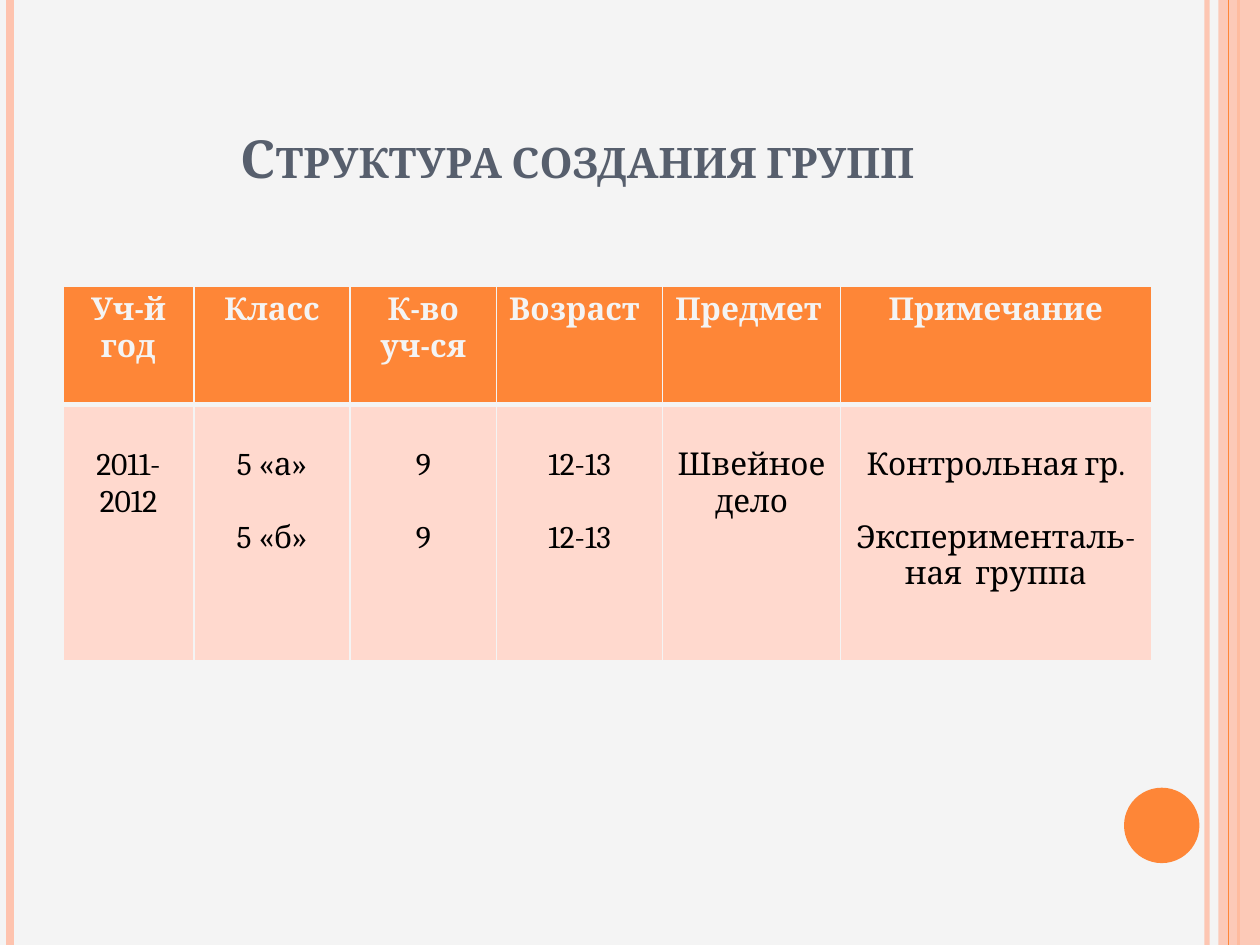
from lxml.etree import SubElement
from pptx import Presentation
from pptx.dml.color import RGBColor
from pptx.enum.shapes import MSO_CONNECTOR, MSO_SHAPE
from pptx.enum.text import MSO_ANCHOR, MSO_AUTO_SIZE, PP_ALIGN
from pptx.oxml.ns import qn
from pptx.util import Cm, Pt

ORANGE = RGBColor(0xFE, 0x86, 0x37)
PEACH = RGBColor(0xFE, 0xC3, 0xAE)
PALE = RGBColor(0xFF, 0xD9, 0xCE)
LIGHT = RGBColor(0xF4, 0xF4, 0xF4)
SLATE = RGBColor(0x57, 0x5F, 0x6D)
BLACK = RGBColor(0, 0, 0)
FONT = "Cambria"
LINE_HEIGHT = 0.73

COLUMNS = [
    (2.64, ["Уч-й", "год"], ["2011-", "2012"]),
    (3.15, ["Класс"], ["5 «а»", "5 «б»"]),
    (2.95, ["К-во", "уч-ся"], ["9", "9"]),
    (3.35, ["Возраст"], ["12-13", "12-13"]),
    (3.58, ["Предмет"], ["Швейное", "дело"]),
    (6.27, ["Примечание"], ["Контрольная гр.", "Эксперименталь-ная  группа"]),
]
LEFT_HEADERS = {"Возраст", "Предмет"}
UNSPACED = {"2012", "дело"}


def set_alpha(fill, percent):
    color = fill._xPr.find(qn("a:solidFill"))[0]
    SubElement(color, qn("a:alpha"), val=str(percent * 1000))


def add_rule(slide, x, height, color, width, alpha=None):
    line = slide.shapes.add_connector(MSO_CONNECTOR.STRAIGHT, Cm(x), 0, Cm(x), Cm(height))
    line.line.color.rgb = color
    line.line.width = Pt(width)
    if alpha:
        set_alpha(line.line.fill, alpha)
    SubElement(line._element.spPr, qn("a:effectLst"))


def add_filled(slide, kind, left, top, width, height, color):
    sp = slide.shapes.add_shape(kind, Cm(left), Cm(top), Cm(width), Cm(height))
    sp.shadow.inherit = False
    sp.fill.solid()
    sp.fill.fore_color.rgb = color
    sp.line.fill.background()
    return sp


def add_frame(slide, width, height):
    add_rule(slide, width - 1.07, height, PEACH, 3, 93)
    add_rule(slide, 0.2, height, PEACH, 4.5)
    add_rule(slide, width - 0.43, height, ORANGE, 1.5)
    band = add_filled(slide, MSO_SHAPE.RECTANGLE, width - 0.84, 0, 0.84, height, PEACH)
    set_alpha(band.fill, 87)
    add_rule(slide, width - 0.64, height, ORANGE, 0.75)
    add_filled(slide, MSO_SHAPE.OVAL, width - 2.74, height - 3.17, 1.52, 1.52, ORANGE)


def add_text(p, text, size, color, bold):
    r = p.add_run()
    r.text = text
    r.font.name = FONT
    r.font.size = Pt(size)
    r.font.bold = bold
    r.font.color.rgb = color
    return r


def add_title(slide, left, top, width, height):
    title = slide.shapes.title
    title.left, title.top, title.width, title.height = map(Cm, (left, top, width, height))
    tf = title.text_frame
    tf.auto_size = MSO_AUTO_SIZE.NONE
    tf.word_wrap = True
    tf.vertical_anchor = MSO_ANCHOR.BOTTOM
    p = tf.paragraphs[0]
    p.alignment = PP_ALIGN.CENTER
    r = add_text(p, "Структура создания групп", 30, SLATE, True)
    r.font._element.set("cap", "small")


def set_borders(cell, top, bottom):
    tc_pr = cell._tc.get_or_add_tcPr()
    for index, (side, width) in enumerate((("L", 1), ("R", 1), ("T", top), ("B", bottom))):
        ln = tc_pr.makeelement(qn(f"a:ln{side}"), {"w": str(Pt(width))})
        fill = SubElement(ln, qn("a:solidFill"))
        SubElement(fill, qn("a:srgbClr"), val=str(LIGHT))
        tc_pr.insert(index, ln)


def fill_cell(cell, lines, header):
    cell.fill.solid()
    cell.fill.fore_color.rgb = ORANGE if header else PALE
    set_borders(cell, *((1, 3) if header else (3, 1)))
    if not header:
        cell.margin_top = Cm(0.13 + LINE_HEIGHT)
    tf = cell.text_frame
    for i, text in enumerate(lines):
        p = tf.add_paragraph() if i else tf.paragraphs[0]
        p.alignment = PP_ALIGN.LEFT if text in LEFT_HEADERS else PP_ALIGN.CENTER
        if i and not header and text not in UNSPACED:
            p.space_before = Cm(LINE_HEIGHT)
        add_text(p, text, 18, LIGHT if header else BLACK, header)


def add_groups_table(slide, left, top, row_heights):
    width = sum(column[0] for column in COLUMNS)
    frame = slide.shapes.add_table(
        len(row_heights), len(COLUMNS), Cm(left), Cm(top), Cm(width), Cm(sum(row_heights)))
    table = frame.table
    for row, height in zip(table.rows, row_heights):
        row.height = Cm(height)
    for i, (column_width, header, body) in enumerate(COLUMNS):
        table.columns[i].width = Cm(column_width)
        fill_cell(table.cell(0, i), header, True)
        fill_cell(table.cell(1, i), body, False)


def main():
    prs = Presentation()
    prs.slide_width, prs.slide_height = Cm(25.4), Cm(19.05)
    slide = prs.slides.add_slide(prs.slide_layouts[5])
    slide.background.fill.solid()
    slide.background.fill.fore_color.rgb = LIGHT
    add_frame(slide, 25.4, 19.05)
    add_title(slide, 1.27, 0.76, 20.75, 3.18)
    add_groups_table(slide, 1.27, 5.77, [2.39, 5.16])
    prs.save("out.pptx")


if __name__ == "__main__":
    main()
